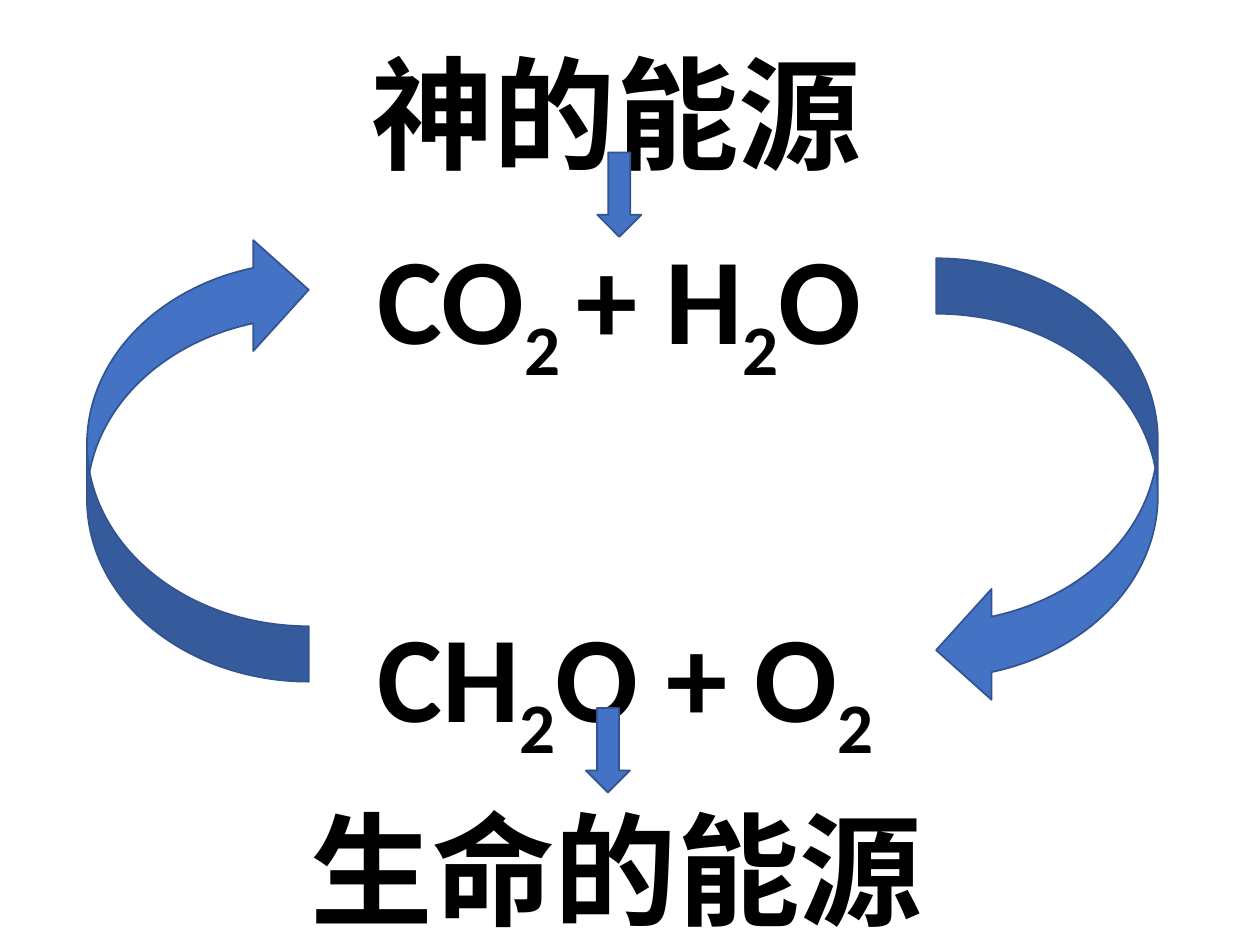
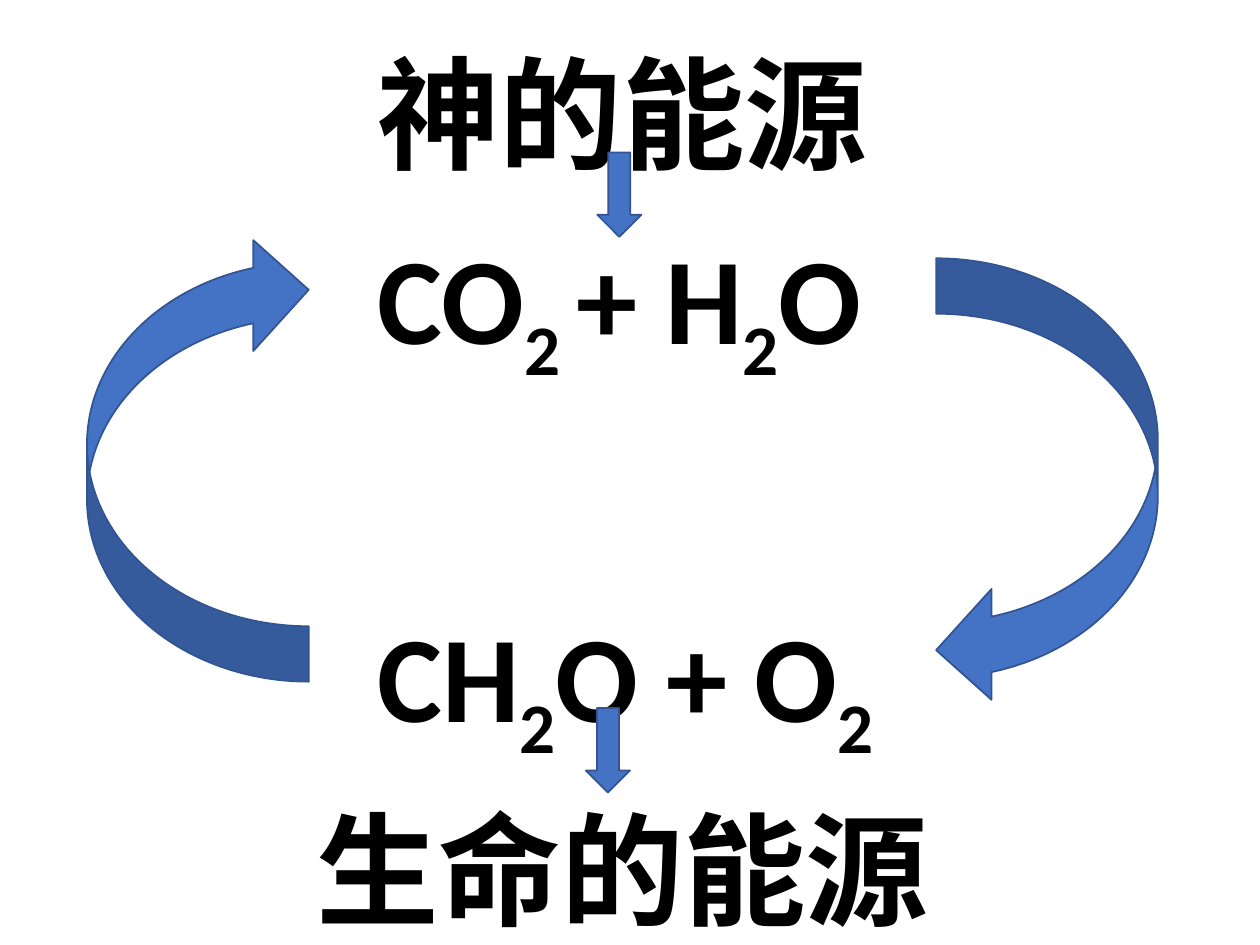
from pptx import Presentation
from pptx.dml.color import RGBColor
from pptx.enum.shapes import MSO_SHAPE
from pptx.enum.text import MSO_ANCHOR, PP_ALIGN
from pptx.util import Pt

CURVED_ARROW = MSO_SHAPE.CURVED_LEFT_ARROW
DOWN_ARROW = MSO_SHAPE.DOWN_ARROW
TOP, BOTTOM = MSO_ANCHOR.TOP, MSO_ANCHOR.BOTTOM
LEFT, CENTER = PP_ALIGN.LEFT, PP_ALIGN.CENTER

COLORS = {"text": "000000", "arrow": "4472C4", "outline": "325491"}
FONT, FONT_SIZE = "Calibri", 70

HEADINGS = [("神的能源", 26.64), ("生命的能源", 458.64)]
HEADING_WIDTHS = [663.84, 671.04]
HEADING_LEFT, HEADING_HEIGHT = 20.16, 82.08

EQUATIONS = [
    [("CO", False), ("2 ", True), ("+ H", False), ("2", True), ("O", False)],
    [("CH", False), ("2", True), ("O + O", False), ("2", True)],
]
EQUATION_BOX = (208.8, 124.56, 326.16, 301.68)
EQUATION_SPACES = [10, 130]

CYCLE_SIZE = (126.72, 255.6)
ENERGY_SIZE = (25.2, 48.24)
ARROWS = [
    (CURVED_ARROW, (534.96, 147.6), CYCLE_SIZE, 0),
    (CURVED_ARROW, (49.68, 133.92), CYCLE_SIZE, 180),
    (DOWN_ARROW, (341.28, 87.12), ENERGY_SIZE, 0),
    (DOWN_ARROW, (334.8, 404.64), ENERGY_SIZE, 0),
]


def color(name):
    return RGBColor.from_string(COLORS[name])


def add_text(slide, box, lines, spaces, line_spacing, alignment, anchor):
    shape = slide.shapes.add_textbox(*map(Pt, box))
    text_frame = shape.text_frame
    text_frame.word_wrap = True
    text_frame.vertical_anchor = anchor
    for index, (line, space) in enumerate(zip(lines, spaces)):
        paragraph = text_frame.add_paragraph() if index else text_frame.paragraphs[0]
        paragraph.alignment = alignment
        paragraph.line_spacing = line_spacing
        paragraph.space_before = Pt(space)
        for text, is_subscript in line:
            run = paragraph.add_run()
            run.text = text
            run.font.name = FONT
            run.font.size = Pt(FONT_SIZE)
            run.font.bold = True
            run.font.color.rgb = color("text")
            if is_subscript:
                run.font._element.set("baseline", "-25000")


def add_arrow(slide, kind, position, size, rotation):
    shape = slide.shapes.add_shape(kind, *map(Pt, position + size))
    shape.rotation = rotation
    shape.shadow.inherit = False
    shape.fill.solid()
    shape.fill.fore_color.rgb = color("arrow")
    shape.line.color.rgb = color("outline")
    shape.line.width = Pt(1)


def build_slide(presentation, heading_width):
    slide = presentation.slides.add_slide(presentation.slide_layouts[6])
    add_text(slide, EQUATION_BOX, EQUATIONS, EQUATION_SPACES, 0.9, LEFT, TOP)
    for heading, top in HEADINGS:
        box = (HEADING_LEFT, top, heading_width, HEADING_HEIGHT)
        add_text(slide, box, [[(heading, False)]], [10], 0.8, CENTER, BOTTOM)
    for arrow in ARROWS:
        add_arrow(slide, *arrow)


def main():
    presentation = Presentation()
    presentation.slide_width, presentation.slide_height = Pt(720), Pt(540)
    for heading_width in HEADING_WIDTHS:
        build_slide(presentation, heading_width)
    presentation.save("out.pptx")


if __name__ == "__main__":
    main()
